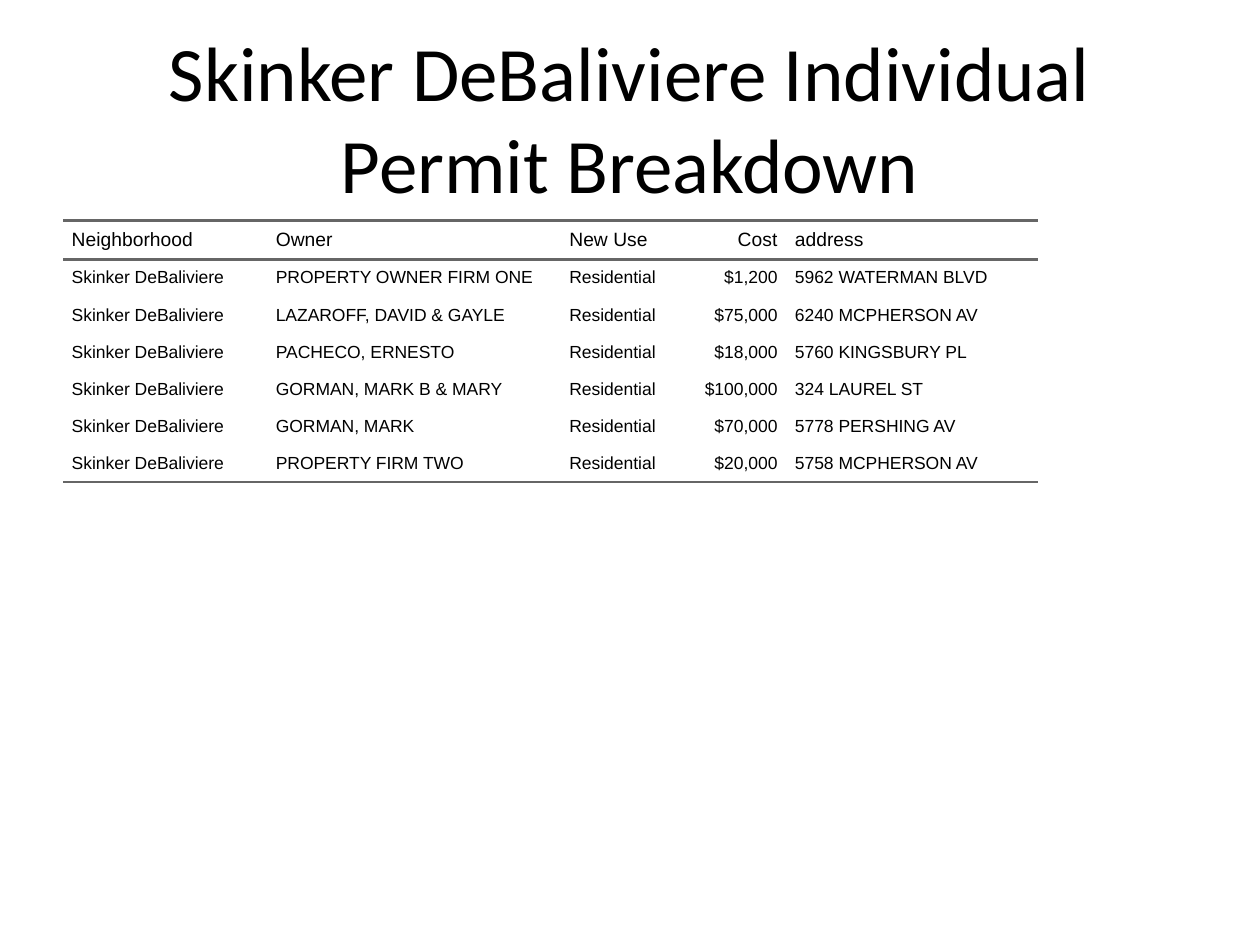
from dataclasses import dataclass

from lxml.etree import SubElement
from pptx import Presentation
from pptx.dml.color import RGBColor
from pptx.enum.text import MSO_ANCHOR, PP_ALIGN
from pptx.oxml.ns import qn
from pptx.util import Inches, Pt


@dataclass(frozen=True)
class Theme:
    ink: str = "000000"
    rule: str = "666666"
    rule_width: float = 1.5
    title_font: str = "Calibri"
    table_font: str = "Arial"
    title_size: int = 44
    header_size: int = 11
    body_size: int = 10
    padding: int = 5
    plain_table: str = "{2D5ABB26-0587-4C30-8999-92F81FD0307C}"


class PermitSlide:
    """Places elements on a grid of 100 columns by 30 rows."""

    COLUMNS, ROWS = 100, 30

    def __init__(self, deck, theme):
        self.theme = theme
        self.column = deck.slide_width / self.COLUMNS
        self.row = deck.slide_height / self.ROWS
        self.slide = deck.slides.add_slide(deck.slide_layouts[5])

    def across(self, columns):
        return round(columns * self.column)

    def down(self, rows):
        return round(rows * self.row)

    def style(self, paragraph, font, size, align):
        paragraph.alignment = align
        paragraph.font.name = font
        paragraph.font.size = Pt(size)
        paragraph.font.color.rgb = RGBColor.from_string(self.theme.ink)

    def title(self, text, left, top, width, height):
        heading = self.slide.shapes.title
        heading.left, heading.top = self.across(left), self.down(top)
        heading.width, heading.height = self.across(width), self.down(height)
        heading.text_frame.text = text
        heading.text_frame.vertical_anchor = MSO_ANCHOR.MIDDLE
        self.style(heading.text_frame.paragraphs[0], self.theme.title_font,
                   self.theme.title_size, PP_ALIGN.CENTER)

    def rule(self, cell, side):
        line = SubElement(cell._tc.get_or_add_tcPr(), qn(f"a:{side}"),
                          w=str(Pt(self.theme.rule_width)))
        fill = SubElement(line, qn("a:solidFill"))
        SubElement(fill, qn("a:srgbClr"), val=self.theme.rule)

    def cell(self, cell, text, size, align, ruled_sides):
        padding = Pt(self.theme.padding)
        cell.text = text
        cell.vertical_anchor = MSO_ANCHOR.MIDDLE
        cell.margin_left = cell.margin_right = 0
        cell.margin_top = cell.margin_bottom = padding
        for side in ruled_sides:
            self.rule(cell, side)
        cell.fill.background()
        paragraph = cell.text_frame.paragraphs[0]
        self.style(paragraph, self.theme.table_font, size, align)
        paragraph.space_before = paragraph.space_after = padding
        # Side indents keep the text off the column edges
        indents = paragraph._p.get_or_add_pPr()
        for name, value in (("marL", padding), ("marR", padding), ("indent", 0)):
            indents.set(name, str(value))

    def table(self, records, widths, right_aligned, left, top, width, height):
        frame = self.slide.shapes.add_table(
            len(records), len(widths), self.across(left), self.down(top),
            self.across(width), self.down(height))
        table = frame.table
        table.first_row = table.horz_banding = False
        table._tbl.tblPr.find(qn("a:tableStyleId")).text = self.theme.plain_table
        for column, share in zip(table.columns, widths):
            column.width = self.across(share)
        # Rules frame the header and close the last row
        ruled = {0: ("lnT", "lnB"), len(records) - 1: ("lnB",)}
        for r, record in enumerate(records):
            table.rows[r].height = self.down(1)
            size = self.theme.body_size if r else self.theme.header_size
            for c, text in enumerate(record):
                align = PP_ALIGN.RIGHT if c in right_aligned else PP_ALIGN.LEFT
                self.cell(table.cell(r, c), text, size, align, ruled.get(r, ()))
        frame.width, frame.height = self.across(width), self.down(height)


NEIGHBORHOOD, USE = "Skinker DeBaliviere", "Residential"
HEADER = ("Neighborhood", "Owner", "New Use", "Cost", "address")
COLUMN_WIDTHS = (16.2, 23.3, 10.4, 7.5, 20)
PERMITS = (
    ("PROPERTY OWNER FIRM ONE", "$1,200", "5962 WATERMAN BLVD"),
    ("LAZAROFF, DAVID & GAYLE", "$75,000", "6240 MCPHERSON AV"),
    ("PACHECO, ERNESTO", "$18,000", "5760 KINGSBURY PL"),
    ("GORMAN, MARK B & MARY", "$100,000", "324 LAUREL ST"),
    ("GORMAN, MARK", "$70,000", "5778 PERSHING AV"),
    ("PROPERTY FIRM TWO", "$20,000", "5758 MCPHERSON AV"),
)


def main():
    deck = Presentation()
    deck.slide_width, deck.slide_height = Inches(10), Inches(7.5)
    page = PermitSlide(deck, Theme())

    # Title
    page.title(f"{NEIGHBORHOOD} Individual Permit Breakdown",
               left=5, top=1.2, width=90, height=5)

    # Permit table
    records = [HEADER] + [(NEIGHBORHOOD, owner, USE, cost, address)
                          for owner, cost, address in PERMITS]
    page.table(records, COLUMN_WIDTHS, right_aligned={HEADER.index("Cost")},
               left=5, top=7, width=90, height=19.8)

    deck.save("out.pptx")


if __name__ == "__main__":
    main()
